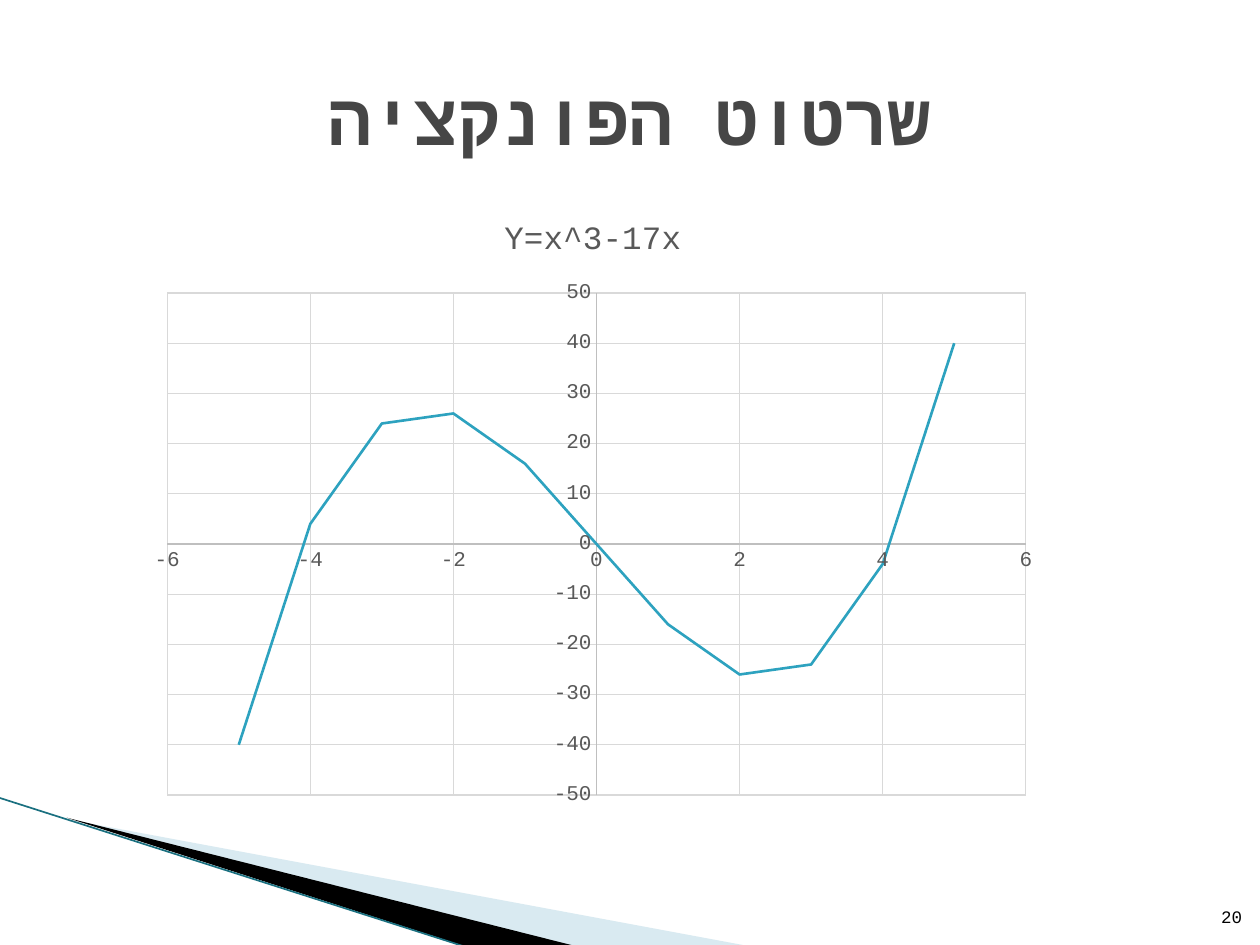
from lxml import etree
from pptx import Presentation
from pptx import util as u
from pptx.chart.data import XyChartData
from pptx.dml.color import RGBColor
from pptx.enum import chart as kinds, shapes, text
from pptx.oxml import ns, parse_xml

Pt = u.Pt
FONT = "Courier New"
COLORS = {
    "title": "464646", "label": "595959", "curve": "2DA2BF",
    "axis": "BFBFBF", "grid": "D9D9D9", "pale": "A0CBDC",
    "edge": "1A7080", "black": "000000",
}


def color(name):
    return RGBColor.from_string(COLORS[name])


def style(font, size, name, bold=False):
    font.name, font.size, font.bold = FONT, Pt(size), bold
    font.color.rgb = color(name)


def stroke(line, name, width):
    line.color.rgb = color(name)
    line.width = Pt(width)


def place(shape, left, top, width, height):
    shape.left, shape.top = Pt(left), Pt(top)
    shape.width, shape.height = Pt(width), Pt(height)


def add_wedge(slide, points, name, alpha=None):
    start, *rest = [(Pt(x), Pt(y)) for x, y in points]
    pen = slide.shapes.build_freeform(*start)
    pen.add_line_segments(rest)
    wedge = pen.convert_to_shape()
    wedge.shadow.inherit = False
    wedge.line.fill.background()
    wedge.fill.solid()
    wedge.fill.fore_color.rgb = color(name)
    if alpha:
        tint = wedge.fill._xPr.find(".//" + ns.qn("a:srgbClr"))
        etree.SubElement(tint, ns.qn("a:alpha"), val=str(alpha * 1000))


def add_edge(slide, x1, y1, x2, y2):
    edge = slide.shapes.add_connector(
        shapes.MSO_CONNECTOR.STRAIGHT, Pt(x1), Pt(y1), Pt(x2), Pt(y2))
    stroke(edge.line, "edge", 0.95)
    etree.SubElement(edge._element.spPr, ns.qn("a:effectLst"))


def set_title(slide, words):
    title = slide.shapes.title
    place(title, 36, 21.6, 648, 90)
    frame = title.text_frame
    frame.text = words
    frame.vertical_anchor = text.MSO_ANCHOR.MIDDLE
    para = frame.paragraphs[0]
    para.alignment = text.PP_ALIGN.CENTER
    style(para.font, 41, "title", True)
    # Hebrew takes the complex-script font and runs right to left
    props = para._p.get_or_add_pPr()
    props.set("rtl", "1")
    run = para.runs[0].font
    style(run, 41, "title", True)
    etree.SubElement(run._element, ns.qn("a:cs"), typeface=FONT)


def add_number(slide, words):
    box = slide.shapes.add_textbox(Pt(681), Pt(504.7), Pt(28.8), Pt(28.8))
    frame = box.text_frame
    frame.margin_left = frame.margin_right = 0
    frame.word_wrap = True
    frame.vertical_anchor = text.MSO_ANCHOR.BOTTOM
    frame.text = words
    para = frame.paragraphs[0]
    para.alignment = text.PP_ALIGN.RIGHT
    style(para.font, 10, "black")


def set_axis(axis, limit, step):
    axis.minimum_scale, axis.maximum_scale = -limit, limit
    axis.major_unit = step
    axis.major_tick_mark = axis.minor_tick_mark = kinds.XL_TICK_MARK.NONE
    axis.has_major_gridlines = True
    stroke(axis.major_gridlines.format.line, "grid", 0.75)
    stroke(axis.format.line, "axis", 0.75)
    style(axis.tick_labels.font, 12, "label")


def set_plot(chart, x, y, w, h):
    area = chart._chartSpace.chart.plotArea
    for old in area.findall(ns.qn("c:layout")):
        area.remove(old)
    sizes = "".join(f'<c:{key} val="{val}"/>'
                    for key, val in zip("xywh", (x, y, w, h)))
    area.insert(0, parse_xml(
        f'<c:layout {ns.nsdecls("c")}><c:manualLayout>'
        '<c:layoutTarget val="inner"/><c:xMode val="edge"/>'
        f'<c:yMode val="edge"/>{sizes}</c:manualLayout></c:layout>'))


def add_curve(slide, name):
    data = XyChartData()
    points = data.add_series("Series 1")
    for x in range(-5, 6):
        points.add_data_point(x, x ** 3 - 17 * x)
    chart = slide.shapes.add_chart(
        kinds.XL_CHART_TYPE.XY_SCATTER_SMOOTH_NO_MARKERS,
        Pt(77.8), Pt(110.2), Pt(522), Pt(357.8), data).chart
    style(chart.font, 10, "black")
    chart.has_legend = False
    chart.has_title = True
    frame = chart.chart_title.text_frame
    frame.text = name
    style(frame.paragraphs[0].font, 18.6, "label")
    chart.chart_title.include_in_layout = False
    set_axis(chart.category_axis, 6, 2)
    set_axis(chart.value_axis, 50, 10)
    set_plot(chart, 0.034, 0.16, 0.94, 0.802)
    plot = chart.plots[0]
    plot.vary_by_categories = False
    curve = plot.series[0]
    curve.smooth = True
    curve.marker.style = kinds.XL_MARKER_STYLE.NONE
    stroke(curve.format.line, "curve", 1.5)


def main():
    deck = Presentation()
    deck.slide_width, deck.slide_height = Pt(720), Pt(540)
    slide = deck.slides.add_slide(deck.slide_layouts[5])

    # Corner decoration
    add_wedge(slide, [(39.6, 468.4), (428.4, 540.7), (328.3, 540.7)],
              "pale", 40)
    add_wedge(slide, [(38.2, 467.3), (329, 540.7), (267.8, 541.4)], "black")
    add_edge(slide, -0.7, 455.8, 267.1, 541.4)

    # Title, slide number and graph
    set_title(slide, "שרטוט הפונקציה")
    add_number(slide, "20")
    add_curve(slide, "Y=x^3-17x")
    deck.save("out.pptx")


if __name__ == "__main__":
    main()
